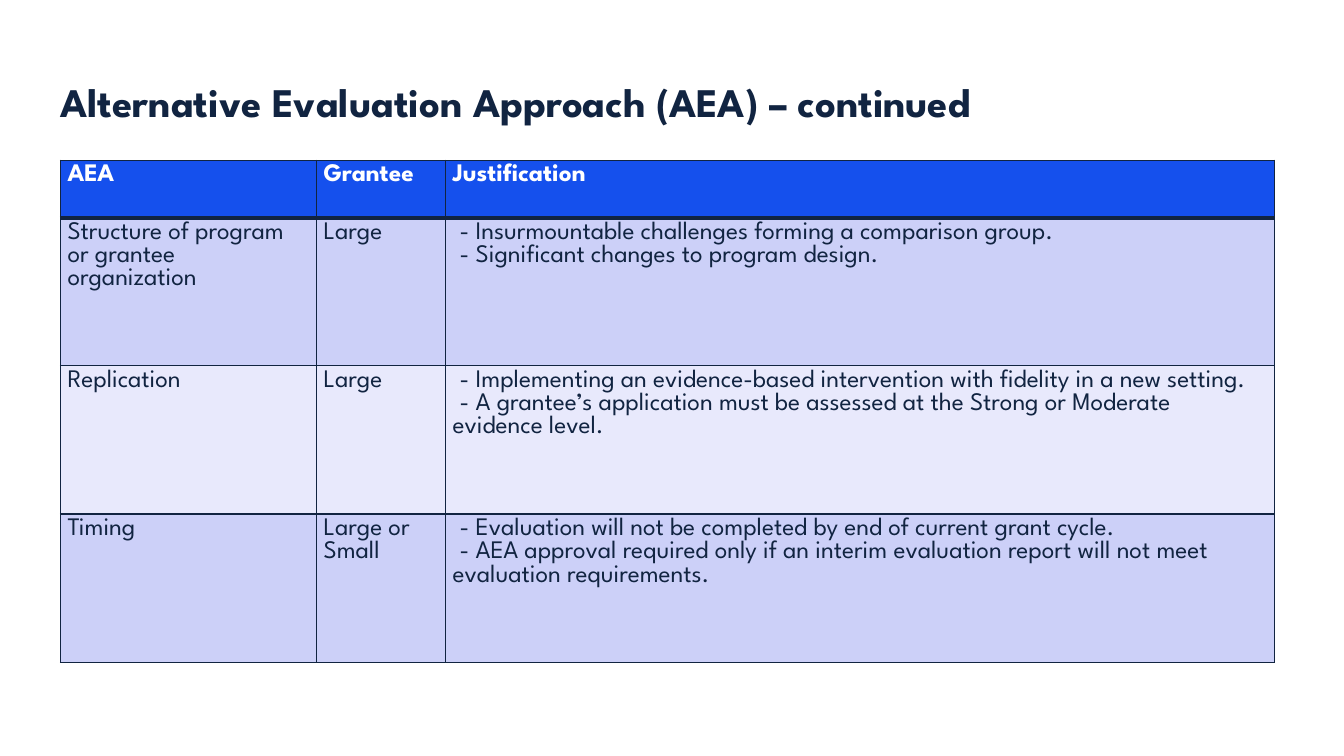
from lxml import etree
from pptx import Presentation
from pptx import util as u
from pptx.dml import color
from pptx.enum import text
from pptx.oxml import ns

TITLE = "Alternative Evaluation Approach (AEA) – continued"
ROWS = [
    (["AEA"], ["Grantee"], ["Justification"]),
    (["Structure of program or grantee organization"], ["Large"],
     ["- Insurmountable challenges forming a comparison group.",
      "- Significant changes to program design."]),
    (["Replication"], ["Large"],
     ["- Implementing an evidence-based intervention with fidelity in a new setting.",
      "- A grantee’s application must be assessed at the Strong or Moderate evidence level."]),
    (["Timing"], ["Large or Small"],
     ["- Evaluation will not be completed by end of current grant cycle.",
      "- AEA approval required only if an interim evaluation report will not meet "
      "evaluation requirements."]),
]
WIDTHS = [2.54, 1.28, 8.22]
HEIGHTS = [0.57, 1.47, 1.47, 1.47]
NAVY, BLUE, WHITE = "112441", "1550ED", "FFFFFF"
BANDS = ["CCD0F8", "E8E9FC"]
LEFT = 0.6


def rgb(code):
    return color.RGBColor.from_string(code)


def write(frame, lines, size=18, ink=NAVY, bold=False, space=None):
    for i, line in enumerate(lines):
        para = frame.paragraphs[0] if i == 0 else frame.add_paragraph()
        para.alignment = text.PP_ALIGN.LEFT
        if space:
            para.line_spacing = space
        if line.startswith("- "):
            props = para._p.get_or_add_pPr()
            props.set("marL", "0")
            props.set("indent", str(u.Inches(0.07)))
        run = para.add_run()
        run.text = line
        font = run.font
        font.name, font.size, font.bold = "League Spartan", u.Pt(size), bold
        font.color.rgb = rgb(ink)


def edge(cell, sides):
    props = cell._tc.get_or_add_tcPr()
    for i, (side, width) in enumerate(sides.items()):
        line = etree.Element(ns.qn("a:ln" + side), w=str(u.Pt(width)))
        fill = etree.SubElement(line, ns.qn("a:solidFill"))
        etree.SubElement(fill, ns.qn("a:srgbClr"), val=NAVY)
        props.insert(i, line)


def main():
    deck = Presentation()
    deck.slide_width, deck.slide_height = u.Inches(13.33), u.Inches(7.5)
    slide = deck.slides.add_slide(deck.slide_layouts[5])

    title = slide.shapes.title
    title.left, title.top = u.Inches(LEFT), u.Inches(0.61)
    title.width, title.height = u.Inches(11.21), u.Inches(0.64)
    frame = title.text_frame
    frame.margin_left = frame.margin_right = frame.margin_top = frame.margin_bottom = 0
    frame.auto_size = text.MSO_AUTO_SIZE.NONE
    frame.vertical_anchor = text.MSO_ANCHOR.BOTTOM
    write(frame, [TITLE], size=29, bold=True, space=0.9)

    table = slide.shapes.add_table(
        len(ROWS), len(WIDTHS), u.Inches(LEFT), u.Inches(1.59),
        u.Inches(sum(WIDTHS)), u.Inches(sum(HEIGHTS))).table
    for col, width in zip(table.columns, WIDTHS):
        col.width = u.Inches(width)
    for r, (row, height) in enumerate(zip(ROWS, HEIGHTS)):
        table.rows[r].height = u.Inches(height)
        head = r == 0
        for c, lines in enumerate(row):
            cell = table.cell(r, c)
            cell.margin_left = cell.margin_right = u.Inches(0.07)
            cell.margin_top = cell.margin_bottom = u.Inches(0.04)
            cell.fill.solid()
            cell.fill.fore_color.rgb = rgb(BLUE if head else BANDS[(r - 1) % 2])
            edge(cell, {"L": 1, "R": 1, "T": 3 if r == 1 else 1, "B": 3 if head else 1})
            write(cell.text_frame, lines, ink=WHITE if head else NAVY, bold=head)

    deck.save("out.pptx")


if __name__ == "__main__":
    main()
